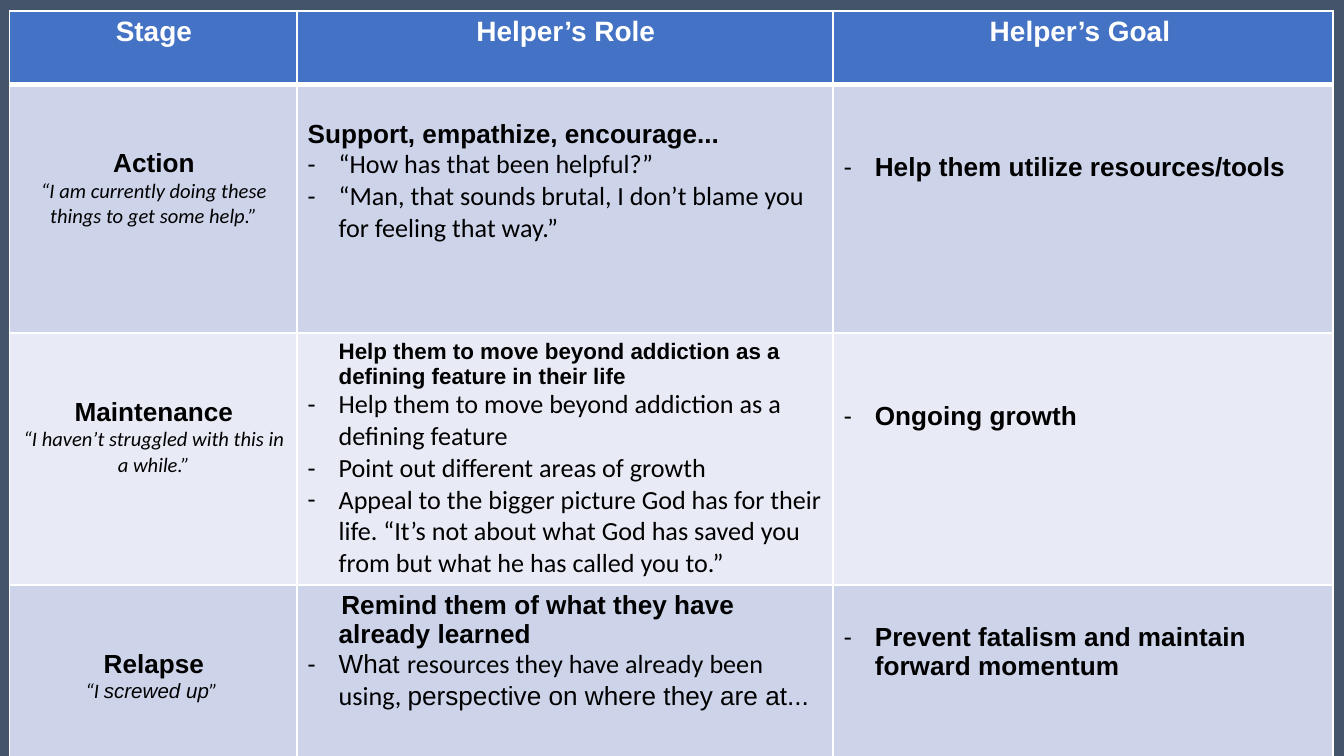
from lxml import etree
from pptx import Presentation
from pptx.dml.color import RGBColor
from pptx.enum.text import PP_ALIGN
from pptx.oxml.ns import qn
from pptx.util import Inches, Pt

CENTER, LEFT = PP_ALIGN.CENTER, PP_ALIGN.LEFT
COLORS = {"page": "44546A", "header": "4472C4", "odd": "CDD4EA", "even": "E8EBF5",
          "line": "FFFFFF", "light": "FFFFFF", "text": "000000"}
COLUMNS = [2.14, 3.99, 3.72]
ROWS = [0.55, 1.85, 1.85, 1.35]
LEFT_EDGE, RIGHT_EDGE, EDGE = 0.08, 0.07, 0.04
HANGING = 0.23

# Span styles: font, size, bold, italic
STYLES = {
    "header": ("Arial", 15, True, False),
    "strong": ("Arial", 14, True, False),
    "small strong": ("Arial", 12, True, False),
    "plain": ("Calibri", 14, False, False),
    "plain arial": ("Arial", 14, False, False),
    "quote": ("Calibri", 11, False, True),
    "quote arial": ("Arial", 11, False, True),
}

HEADERS = ["Stage", "Helper’s Role", "Helper’s Goal "]


def centered(*spans):
    return {"spans": spans, "align": CENTER}


def heading(text, style="strong", left=0, first=0):
    return {"spans": [(text, style)], "left": left, "first": first}


def bullet(*spans):
    return {"spans": spans, "left": HANGING, "first": -HANGING, "bullet": True}


def stage(name, *quote):
    return 0.48, [centered((name, "strong")), centered(*quote)]


def goal(text, top=0.51):
    return top, [bullet((text, "strong"))]


# Each cell is its top margin and its paragraphs
BODY = [
    [stage("Action", ("“I am currently doing these things to get some help.”", "quote")),
     (0.26, [heading("Support, empathize, encourage..."),
             bullet(("“How has that been helpful?”", "plain")),
             bullet(("“Man, that sounds brutal, I don’t blame you for feeling that way.”",
                     "plain"))]),
     goal("Help them utilize resources/tools")],
    [stage("Maintenance", ("“I haven’t struggled with this in a while.”", "quote")),
     (EDGE, [heading("Help them to move beyond addiction as a defining feature in their life",
                     "small strong", HANGING),
             bullet(("Help them to move beyond addiction as a defining feature", "plain")),
             bullet(("Point out different areas of growth", "plain")),
             bullet(("Appeal to the bigger picture God has for their life. “It’s not about "
                     "what God has saved you from but what he has called you to.”", "plain"))]),
     goal("Ongoing growth")],
    [stage("Relapse", ("“I ", "quote"), ("screwed up", "quote arial"), ("” ", "quote")),
     (EDGE, [heading("Remind them of what they have already learned",
                     left=HANGING, first=0.02),
             bullet(("What ", "plain arial"),
                    ("resources they have already been using, ", "plain"),
                    ("perspective on where they are at...", "plain arial"))]),
     goal("Prevent fatalism and maintain forward momentum", 0.28)],
]


def color(name):
    return RGBColor.from_string(COLORS[name])


def add_solid(parent, tag, name):
    node = etree.SubElement(parent, qn(tag))
    etree.SubElement(node, qn("a:srgbClr"), val=COLORS[name])


def set_borders(cell, top, bottom):
    properties = cell._tc.get_or_add_tcPr()
    for side, width in (("L", 1), ("R", 1), ("T", top), ("B", bottom)):
        line = etree.SubElement(properties, qn(f"a:ln{side}"), w=str(Pt(width)))
        add_solid(line, "a:solidFill", "line")


def set_indent(para, left, first, dashed):
    properties = para._p.get_or_add_pPr()
    properties.set("marL", str(Inches(left)))
    properties.set("indent", str(Inches(first)))
    if dashed:
        add_solid(properties, "a:buClr", "text")
        etree.SubElement(properties, qn("a:buFont"), typeface="Calibri")
        etree.SubElement(properties, qn("a:buChar"), char="-")


def write_span(para, text, style, ink):
    span = para.add_run()
    span.text = text
    font = span.font
    font.name, size, font.bold, font.italic = STYLES[style]
    font.size = Pt(size)
    font.color.rgb = color(ink)


def fill_cell(cell, fill, margin, paragraphs, ink="text", top=1, bottom=1):
    set_borders(cell, top, bottom)
    cell.fill.solid()
    cell.fill.fore_color.rgb = color(fill)
    cell.margin_left, cell.margin_right = Inches(LEFT_EDGE), Inches(RIGHT_EDGE)
    cell.margin_top, cell.margin_bottom = Inches(margin), Inches(EDGE)
    frame = cell.text_frame
    for index, content in enumerate(paragraphs):
        para = frame.add_paragraph() if index else frame.paragraphs[0]
        para.alignment = content.get("align", LEFT)
        set_indent(para, content.get("left", 0), content.get("first", 0),
                   content.get("bullet", False))
        for text, style in content["spans"]:
            write_span(para, text, style, ink)


def add_stage_table(page):
    table = page.shapes.add_table(
        len(ROWS), len(COLUMNS), Inches(0.07), Inches(0.08),
        Inches(sum(COLUMNS)), Inches(sum(ROWS))).table
    for column, width in zip(table.columns, COLUMNS):
        column.width = Inches(width)
    for row, height in zip(table.rows, ROWS):
        row.height = Inches(height)
    for c, title in enumerate(HEADERS):
        fill_cell(table.cell(0, c), "header", EDGE, [centered((title, "header"))],
                  ink="light", bottom=3)
    for r, cells in enumerate(BODY, start=1):
        for c, (margin, paragraphs) in enumerate(cells):
            fill_cell(table.cell(r, c), "odd" if r % 2 else "even", margin, paragraphs,
                      top=3 if r == 1 else 1)


def main():
    deck = Presentation()
    deck.slide_width = Inches(10)
    deck.slide_height = deck.slide_width * 9 // 16
    page = deck.slides.add_slide(deck.slide_layouts[6])
    page.background.fill.solid()
    page.background.fill.fore_color.rgb = color("page")
    add_stage_table(page)
    deck.save("out.pptx")


if __name__ == "__main__":
    main()
